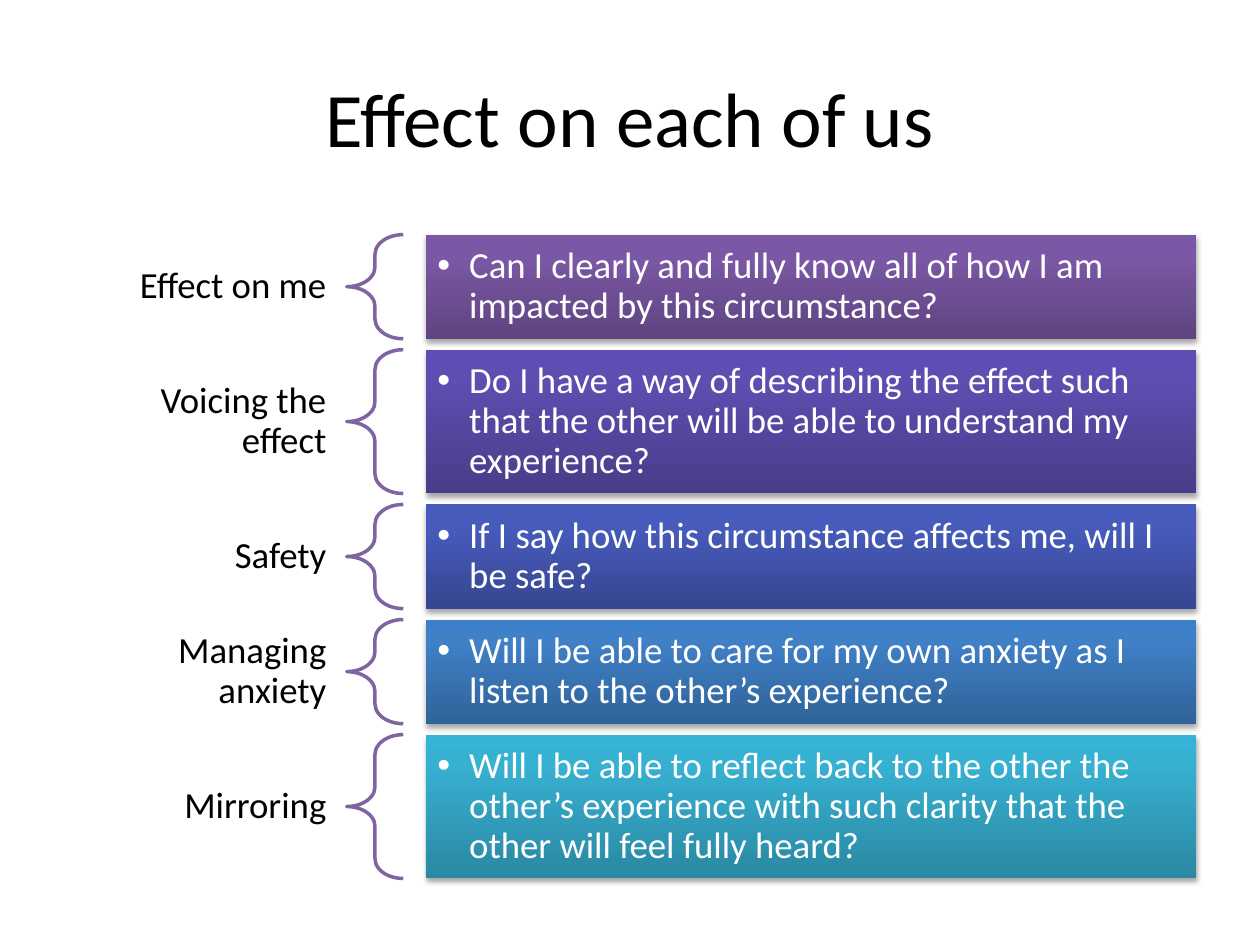
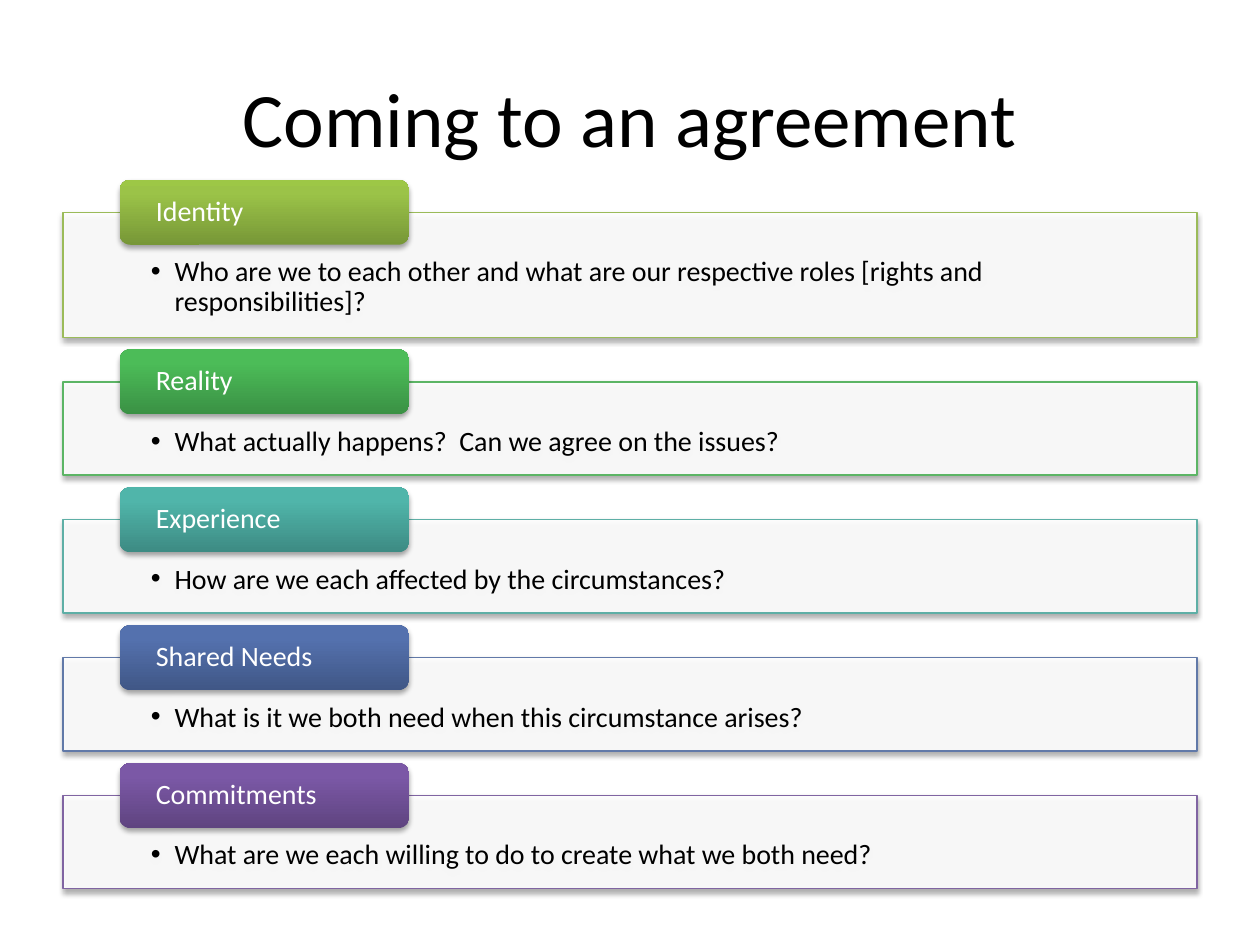
from copy import deepcopy
from dataclasses import dataclass

from lxml.etree import SubElement
from pptx import Presentation
from pptx.dml.color import RGBColor
from pptx.enum.shapes import MSO_SHAPE as Shape
from pptx.enum.text import MSO_ANCHOR as Anchor, PP_ALIGN as Align
from pptx.oxml.ns import qn
from pptx.util import Cm, Pt


@dataclass(frozen=True)
class Theme:
    font: str = "Calibri"
    title_size: int = 44
    effect_size: int = 21
    agreement_size: int = 16
    dark: str = "000000"
    light: str = "FFFFFF"
    accent: str = "8064A2"
    # Gradient colours run from the bottom edge to the top edge.
    purple: tuple = ("5F4480", "7B58A6", "7C57A8")
    violet: tuple = ("483D89", "5D4FB1", "5C4EB4")
    indigo: tuple = ("374691", "475BBC", "455ABF")
    blue: tuple = ("306399", "3F80C7", "3C80CB")
    cyan: tuple = ("2A88A2", "37B1D2", "34B4D6")
    lime: tuple = ("779737", "9BC348", "9DC746")
    green: tuple = ("3A9144", "4CBC58", "4ABF57")
    teal: tuple = ("3D8B83", "50B5AA", "4EB8AC")
    navy: tuple = ("405786", "5471AE", "5271B0")


THEME = Theme()

# Label, lines in the label, question, card height, gradient
EFFECTS = [
    ("Effect on me", 1, "Can I clearly and fully know all of how I am impacted by this circumstance?",
     2.1, THEME.purple),
    ("Voicing the effect", 2, "Do I have a way of describing the effect such that the other will be able "
     "to understand my experience?", 2.9, THEME.violet),
    ("Safety", 1, "If I say how this circumstance affects me, will I be safe?", 2.1, THEME.indigo),
    ("Managing anxiety", 2, "Will I be able to care for my own anxiety as I listen to the other’s experience?",
     2.1, THEME.blue),
    ("Mirroring", 1, "Will I be able to reflect back to the other the other’s experience with such clarity "
     "that the other will feel fully heard?", 2.9, THEME.cyan),
]

# Heading, question, panel height, outline, gradient
AGREEMENTS = [
    ("Identity", "Who are we to each other and what are our respective roles [rights and responsibilities]?",
     2.52, "9BBB59", THEME.lime),
    ("Reality", "What actually happens?  Can we agree on the issues?", 1.88, "5CB565", THEME.green),
    ("Experience", "How are we each affected by the circumstances?", 1.88, "5EAFA6", THEME.teal),
    ("Shared Needs", "What is it we both need when this circumstance arises?", 1.88, "6179A8", THEME.navy),
    ("Commitments", "What are we each willing to do to create what we both need?", 1.88,
     THEME.accent, THEME.purple),
]


class Deck:
    def __init__(self, theme):
        self.theme = theme
        self.presentation = Presentation()
        self.presentation.slide_width = Cm(25.4)
        self.presentation.slide_height = Cm(19.05)
        self.slide = None

    def new_slide(self, title):
        self.slide = self.presentation.slides.add_slide(self.presentation.slide_layouts[6])
        self.text_box(title, (1.27, 0.76, 22.86, 3.18), self.theme.title_size,
                      align=Align.CENTER, insets=(0.25, 0.13, 0.25, 0.13), spacing=1.0)

    def set_text(self, shape, text, size, color, insets, align=Align.LEFT,
                 anchor=Anchor.MIDDLE, bullet_indent=None, spacing=0.9):
        frame = shape.text_frame
        frame.word_wrap = True
        frame.vertical_anchor = anchor
        (frame.margin_left, frame.margin_top,
         frame.margin_right, frame.margin_bottom) = map(Cm, insets)
        paragraph = frame.paragraphs[0]
        paragraph.text = text
        paragraph.alignment = align
        paragraph.line_spacing = spacing
        if bullet_indent:
            properties = paragraph._p.get_or_add_pPr()
            properties.set("marL", str(Cm(bullet_indent)))
            properties.set("indent", str(-Cm(bullet_indent)))
            SubElement(properties, qn("a:buFont")).set("typeface", "Arial")
            SubElement(properties, qn("a:buChar")).set("char", "•")
        paragraph.font.name = self.theme.font
        paragraph.font.size = Pt(size)
        paragraph.font.color.rgb = RGBColor.from_string(color)

    def text_box(self, text, box, size, **style):
        shape = self.slide.shapes.add_textbox(*map(Cm, box))
        self.set_text(shape, text, size, self.theme.dark, **style)

    def plain_shape(self, kind, box):
        shape = self.slide.shapes.add_shape(kind, *map(Cm, box))
        shape.shadow.inherit = False
        return shape

    def cast_shadow(self, shape):
        effects = shape._element.spPr.find(qn("a:effectLst"))
        shadow = SubElement(effects, qn("a:outerShdw"), blurRad=str(Pt(3.1)), dist=str(Pt(1.8)),
                            dir="5400000", rotWithShape="0")
        color = SubElement(shadow, qn("a:srgbClr"), val=self.theme.dark)
        SubElement(color, qn("a:alpha"), val="35000")

    def gradient_shape(self, kind, box, colors):
        shape = self.plain_shape(kind, box)
        shape.line.fill.background()
        shape.fill.gradient()
        shape.fill.gradient_angle = 90
        stop_list = next(shape._element.spPr.iter(qn("a:gsLst")))
        stop_list.append(deepcopy(stop_list[-1]))
        for stop, position, color in zip(shape.fill.gradient_stops, (0, 0.8, 1), colors):
            stop.position = position
            stop.color.rgb = RGBColor.from_string(color)
        self.cast_shadow(shape)
        return shape

    def brace(self, box):
        shape = self.plain_shape(Shape.LEFT_BRACE, box)
        shape.adjustments[0] = 0.35
        shape.adjustments[1] = 0.5
        shape.fill.background()
        shape.line.color.rgb = RGBColor.from_string(self.theme.accent)
        shape.line.width = Pt(2)

    def question_card(self, text, box, colors):
        card = self.gradient_shape(Shape.RECTANGLE, box, colors)
        self.set_text(card, text, self.theme.effect_size, self.theme.light,
                      insets=(0.23,) * 4, bullet_indent=0.64)

    def question_panel(self, text, box, outline):
        """Draw a nearly opaque white panel with room for a tab on its top edge."""
        panel = self.plain_shape(Shape.RECTANGLE, box)
        panel.fill.solid()
        panel.fill.fore_color.rgb = RGBColor.from_string(self.theme.light)
        fill_color = panel._element.spPr.find(qn("a:solidFill"))[0]
        SubElement(fill_color, qn("a:alpha"), val="90000")
        panel.line.color.rgb = RGBColor.from_string(outline)
        panel.line.width = Pt(0.75)
        self.cast_shadow(panel)
        self.set_text(panel, text, self.theme.agreement_size, self.theme.dark, anchor=Anchor.TOP,
                      insets=(1.77, 0.91, 1.77, 0.3), bullet_indent=0.48)

    def tab(self, text, box, colors):
        tab = self.gradient_shape(Shape.ROUNDED_RECTANGLE, box, colors)
        self.set_text(tab, text, self.theme.agreement_size, self.theme.light,
                      insets=(0.67, 0, 0.67, 0))


def add_effects_slide(deck):
    deck.new_slide("Effect on each of us")
    top, gap = 4.73, 0.22
    for label, label_lines, question, height, colors in EFFECTS:
        label_height = 0.33 + 0.81 * label_lines
        label_top = top + (height - label_height) / 2
        deck.text_box(label, (1.27, label_top, 5.72, label_height), deck.theme.effect_size,
                      align=Align.RIGHT, insets=(0.41, 0.15, 0.41, 0.15))
        deck.brace((6.99, top, 1.14, height))
        deck.question_card(question, (8.59, top, 15.52, height), colors)
        top += height + gap


def add_agreement_slide(deck):
    deck.new_slide("Coming to an agreement")
    top, gap, tab_height = 4.28, 0.9, 1.31
    for heading, question, height, outline, colors in AGREEMENTS:
        deck.question_panel(question, (1.27, top, 22.86, height), outline)
        deck.tab(heading, (2.41, top - tab_height / 2, 5.84, tab_height), colors)
        top += height + gap


def main():
    deck = Deck(THEME)
    add_effects_slide(deck)
    add_agreement_slide(deck)
    deck.presentation.save("out.pptx")


if __name__ == "__main__":
    main()
